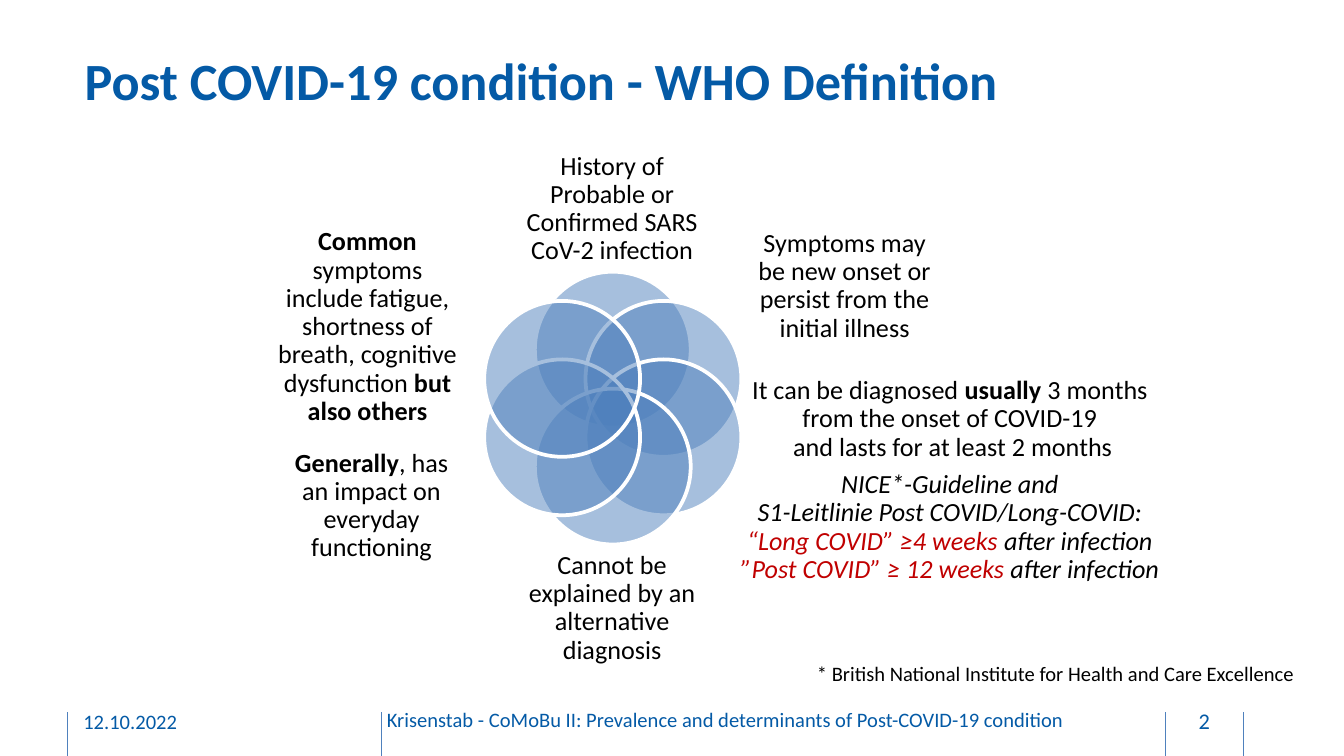
import math

import lxml.etree
import pptx
import pptx.dml.color
import pptx.enum.shapes
import pptx.enum.text
import pptx.oxml.ns
import pptx.util

CELL = 0.1
COLUMNS, ROWS = 100, 56.25
BLUE, TITLE_BLUE, RED = "4F81BD", "045AA6", "C00000"
BLACK, WHITE = "000000", "FFFFFF"
CENTER = pptx.enum.text.PP_ALIGN.CENTER
LEFT = pptx.enum.text.PP_ALIGN.LEFT
MIDDLE = pptx.enum.text.MSO_ANCHOR.MIDDLE
TOP = pptx.enum.text.MSO_ANCHOR.TOP
BOLD = {"bold": True}
ITALIC = {"italic": True}
RED_ITALIC = {"italic": True, "color": RED}
LABEL_SPACING = {"line_spacing": 0.9, "space_after": pptx.util.Pt(4.9)}

LABELS = [
    ((38.3, 11.6, 14.5, 7.9),
     [[("History of Probable or Confirmed SARS CoV-2 infection", {})]]),
    ((56, 17, 13.7, 8.6),
     [[("Symptoms may be new onset or persist from the initial illness", {})]]),
    ((52.2, 30.9, 37.4, 9.7),
     [[("It can be diagnosed ", {}), ("usually", BOLD),
       (" 3 months \nfrom the onset of COVID-19 \nand lasts for at least 2 months", {})],
      [("NICE*-Guideline and \nS1-Leitlinie Post COVID/Long-COVID: \n", ITALIC),
       ("“Long COVID” ≥4 weeks ", RED_ITALIC), ("after infection \n", ITALIC),
       ("”Post COVID” ≥ 12 weeks ", RED_ITALIC), ("after infection ", ITALIC)]]),
    ((38.3, 41.3, 14.5, 7.9),
     [[("Cannot be explained by an alternative diagnosis", {})]]),
    ((20.5, 19.5, 13.7, 9.7),
     [[("Common", BOLD),
       (" symptoms include fatigue, shortness of breath, cognitive dysfunction ", {}),
       ("but also others", BOLD)]]),
    ((20.8, 32.8, 13.7, 9.7),
     [[("Generally", BOLD), (", has an impact on everyday functioning", {})]]),
]


def grid(cells):
    """Turn a count of grid cells into a length."""
    return pptx.util.Inches(cells * CELL)


def color(hex_string):
    """Turn a hex string into a colour."""
    return pptx.dml.color.RGBColor.from_string(hex_string)


def apply_format(target, values):
    """Set attributes of a target from a dict of format values."""
    for name, value in values.items():
        setattr(target, name, value)


def write_run(paragraph, text, values):
    """Add formatted text, turning each newline into a line break."""
    values = {"name": "Calibri", "color": BLACK, **values}
    hex_string = values.pop("color")
    for index, line in enumerate(text.split("\n")):
        if index:
            paragraph.add_line_break()
        if line:
            run = paragraph.add_run()
            run.text = line
            apply_format(run.font, values)
            run.font.color.rgb = color(hex_string)


def write_text(shape, paragraphs, font, paragraph_format, frame_format):
    """Fill a shape with paragraphs of formatted runs."""
    frame = shape.text_frame
    apply_format(frame, {"word_wrap": True, **frame_format})
    for index, runs in enumerate(paragraphs):
        paragraph = frame.add_paragraph() if index else frame.paragraphs[0]
        apply_format(paragraph, paragraph_format)
        for text, values in runs:
            write_run(paragraph, text, {**font, **values})


def margins(horizontal, vertical):
    """Give the frame format for equal opposite margins in grid cells."""
    return {"margin_left": grid(horizontal), "margin_right": grid(horizontal),
            "margin_top": grid(vertical), "margin_bottom": grid(vertical)}


def add_text(slide, box, paragraphs, font, paragraph_format, frame_format):
    """Add a text box at a grid position."""
    shape = slide.shapes.add_textbox(*map(grid, box))
    write_text(shape, paragraphs, font, paragraph_format, frame_format)


def add_title(slide, text):
    """Place and fill the title placeholder."""
    title = slide.shapes.title
    apply_format(title, dict(zip(("left", "top", "width", "height"),
                                 map(grid, (6.3, 2, 87.3, 7.8)))))
    write_text(title, [[(text, {})]],
               {"size": pptx.util.Pt(28), "bold": True, "color": TITLE_BLUE},
               {"alignment": LEFT},
               {"vertical_anchor": MIDDLE, **margins(0, 0),
                "auto_size": pptx.enum.text.MSO_AUTO_SIZE.NONE})


def add_circle(slide, center_column, center_row, diameter):
    """Add a half-transparent circle with a white outline."""
    box = (center_column - diameter / 2, center_row - diameter / 2, diameter, diameter)
    circle = slide.shapes.add_shape(pptx.enum.shapes.MSO_SHAPE.OVAL, *map(grid, box))
    circle.shadow.inherit = False
    circle.fill.solid()
    circle.fill.fore_color.rgb = color(BLUE)
    circle.line.color.rgb = color(WHITE)
    circle.line.width = pptx.util.Pt(2)
    fill_color = circle.fill._xPr.find(".//" + pptx.oxml.ns.qn("a:srgbClr"))
    lxml.etree.SubElement(fill_color, pptx.oxml.ns.qn("a:alpha"), val="50000")


def add_flower(slide):
    """Place six overlapping circles clockwise around one centre."""
    for index in range(6):
        angle = math.radians(60 * index - 90)
        add_circle(slide, 45.6 + 4.35 * math.cos(angle), 30.37 + 4.35 * math.sin(angle), 11.6)


def add_divider(slide, column):
    """Add a thin vertical footer line running to the slide's bottom edge."""
    line = slide.shapes.add_connector(
        pptx.enum.shapes.MSO_CONNECTOR.STRAIGHT,
        *map(grid, (column, 53, column, ROWS)))
    line.line.color.rgb = color(BLUE)
    line.line.width = pptx.util.Pt(0.5)
    lxml.etree.SubElement(line._element.spPr, pptx.oxml.ns.qn("a:effectLst"))


def add_footer(slide):
    """Add the footer dividers, date, project name and slide number."""
    for column in (5, 28.4, 86.7, 92.5):
        add_divider(slide, column)
    flat = {"vertical_anchor": MIDDLE, **margins(0, 0.5)}
    inset = {"vertical_anchor": TOP, **margins(1, 0.5)}
    project = "Krisenstab - CoMoBu II: Prevalence and determinants of Post-COVID-19 condition"
    for text, column, width, size, alignment, frame_format in (
            ("12.10.2022", 6.2, 20.3, 11, LEFT, flat),
            (project, 27.8, 64.5, 11, LEFT, inset),
            ("2", 86.9, 5.4, 12, CENTER, flat)):
        add_text(slide, (column, 52.15, width, 3), [[(text, {})]],
                 {"size": pptx.util.Pt(size), "color": TITLE_BLUE},
                 {"alignment": alignment}, frame_format)


def main():
    """Build and save the slide."""
    presentation = pptx.Presentation()
    presentation.slide_width, presentation.slide_height = grid(COLUMNS), grid(ROWS)
    slide = presentation.slides.add_slide(presentation.slide_layouts[5])
    add_title(slide, "Post COVID-19 condition - WHO Definition")
    add_flower(slide)
    for box, paragraphs in LABELS:
        add_text(slide, box, paragraphs, {"size": pptx.util.Pt(14)},
                 {"alignment": CENTER, **LABEL_SPACING},
                 {"vertical_anchor": MIDDLE, **margins(0, 0)})
    add_text(slide, (59.8, 48.7, 38.7, 2.9),
             [[("* British National Institute for Health and Care Excellence", {})]],
             {"size": pptx.util.Pt(11)}, {"alignment": LEFT},
             {"word_wrap": False, "auto_size": pptx.enum.text.MSO_AUTO_SIZE.SHAPE_TO_FIT_TEXT})
    add_footer(slide)
    presentation.save("out.pptx")


if __name__ == "__main__":
    main()
